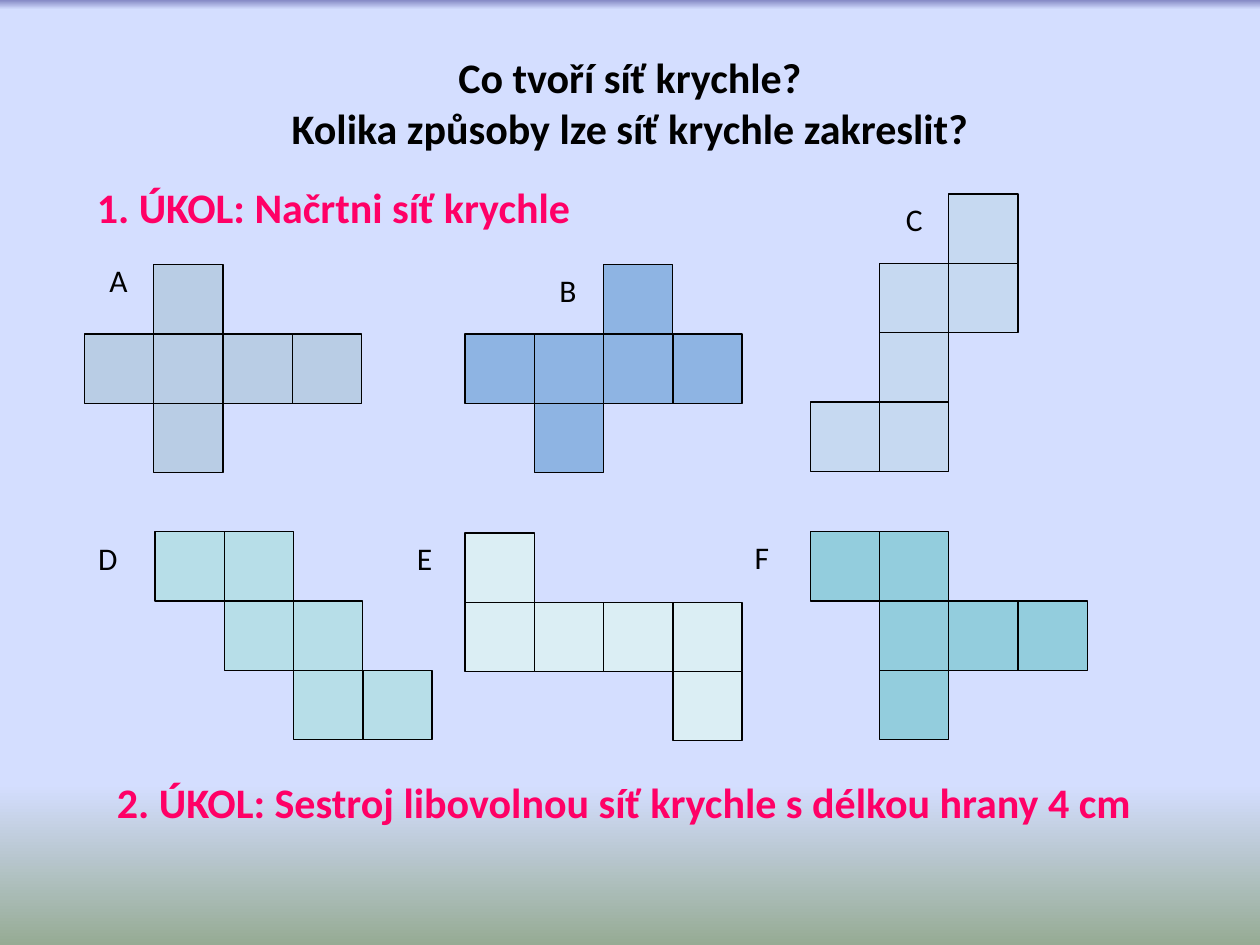
from dataclasses import dataclass

from lxml.etree import SubElement
from pptx import Presentation
from pptx.dml.color import RGBColor as RGB
from pptx.enum.shapes import MSO_SHAPE as Shape
from pptx.enum.text import MSO_ANCHOR as Anchor, PP_ALIGN as Align
from pptx.oxml.ns import qn
from pptx.util import Inches, Pt


@dataclass(frozen=True)
class Theme:
    font: str = "Calibri"
    heading_pt: int = 24
    label_pt: int = 18
    line_pt: float = 0.75
    ink: str = "000000"
    task: str = "FF0066"
    # Background stops: percent from the top, colour
    background: tuple = ((0, "8488C4"), (1, "D4DEFF"), (83, "D4DEFF"), (100, "96AB94"))


@dataclass(frozen=True)
class Net:
    label: str
    label_at: tuple[float, float]
    left: float
    top: float
    color: str
    rows: tuple[str, ...]  # "#" marks a square of the net


THEME = Theme()
SIDE = 0.55

NETS = (
    Net("A", (0.77, 2.02), 0.67, 2.1, "B9CDE5", (".#..", "####", ".#..")),
    Net("B", (4.34, 2.1), 3.69, 2.1, "8EB4E3", ("..#.", "####", ".#..")),
    Net("C", (7.09, 1.54), 6.43, 1.54, "C6D9F1", ("..#", ".##", ".#.", "##.")),
    Net("D", (0.68, 4.23), 1.23, 4.22, "B7DEE8", ("##..", ".##.", "..##")),
    Net("E", (3.21, 4.23), 3.69, 4.23, "DBEEF4", ("#...", "####", "...#")),
    Net("F", (5.89, 4.22), 6.43, 4.22, "93CDDD", ("##..", ".###", ".#..")),
)


def paint_background(s) -> None:
    fill = s.background.fill
    fill.gradient()
    fill.gradient_angle = 270
    stops = s.element.find(".//" + qn("a:gsLst"))
    for stop in list(stops):
        stops.remove(stop)
    for percent, color in THEME.background:
        stop = SubElement(stops, qn("a:gs"), pos=str(percent * 1000))
        SubElement(stop, qn("a:srgbClr"), val=color)


def add_text(s, lines: tuple[str, ...], left: float, top: float, width: float,
             height: float, size: int, color: str, bold: bool = False,
             wrap: bool = True, align=Align.LEFT, anchor=Anchor.TOP) -> None:
    sp = s.shapes.add_textbox(Inches(left), Inches(top), Inches(width), Inches(height))
    tf = sp.text_frame
    tf.word_wrap = wrap
    tf.vertical_anchor = anchor
    p = tf.paragraphs[0]
    p.alignment = align
    for i, line in enumerate(lines):
        if i:
            p.add_line_break()
        r = p.add_run()
        r.text = line
        r.font.name = THEME.font
        r.font.size = Pt(size)
        r.font.bold = bold
        r.font.color.rgb = RGB.from_string(color)


def add_net(s, net: Net) -> None:
    group = s.shapes.add_group_shape()
    for row, cells in enumerate(net.rows):
        for col, cell in enumerate(cells):
            if cell != "#":
                continue
            sp = group.shapes.add_shape(
                Shape.RECTANGLE, Inches(net.left + col * SIDE),
                Inches(net.top + row * SIDE), Inches(SIDE), Inches(SIDE))
            sp.shadow.inherit = False
            sp.fill.solid()
            sp.fill.fore_color.rgb = RGB.from_string(net.color)
            sp.line.color.rgb = RGB.from_string(THEME.ink)
            sp.line.width = Pt(THEME.line_pt)
    add_text(s, (net.label,), *net.label_at, 0.35, 0.4, THEME.label_pt, THEME.ink,
             wrap=False)


def main() -> None:
    prs = Presentation()
    prs.slide_width, prs.slide_height = Inches(10), Inches(7.5)
    s = prs.slides.add_slide(prs.slide_layouts[6])
    paint_background(s)

    # Title and tasks
    add_text(s, ("Co tvoří síť krychle?", "Kolika způsoby lze síť krychle zakreslit?"),
             0.5, 0.3, 9, 1.02, THEME.heading_pt, THEME.ink, bold=True,
             align=Align.CENTER, anchor=Anchor.MIDDLE)
    add_text(s, ("1. ÚKOL: Načrtni síť krychle",), 0.67, 1.39, 4.25, 0.55,
             THEME.heading_pt, THEME.task, bold=True)
    add_text(s, ("2. ÚKOL: Sestroj libovolnou síť krychle s délkou hrany 4 cm",),
             0.83, 6.11, 8.74, 0.86, THEME.heading_pt, THEME.task, bold=True)

    # Cube nets
    for net in NETS:
        add_net(s, net)

    prs.save("out.pptx")


if __name__ == "__main__":
    main()
